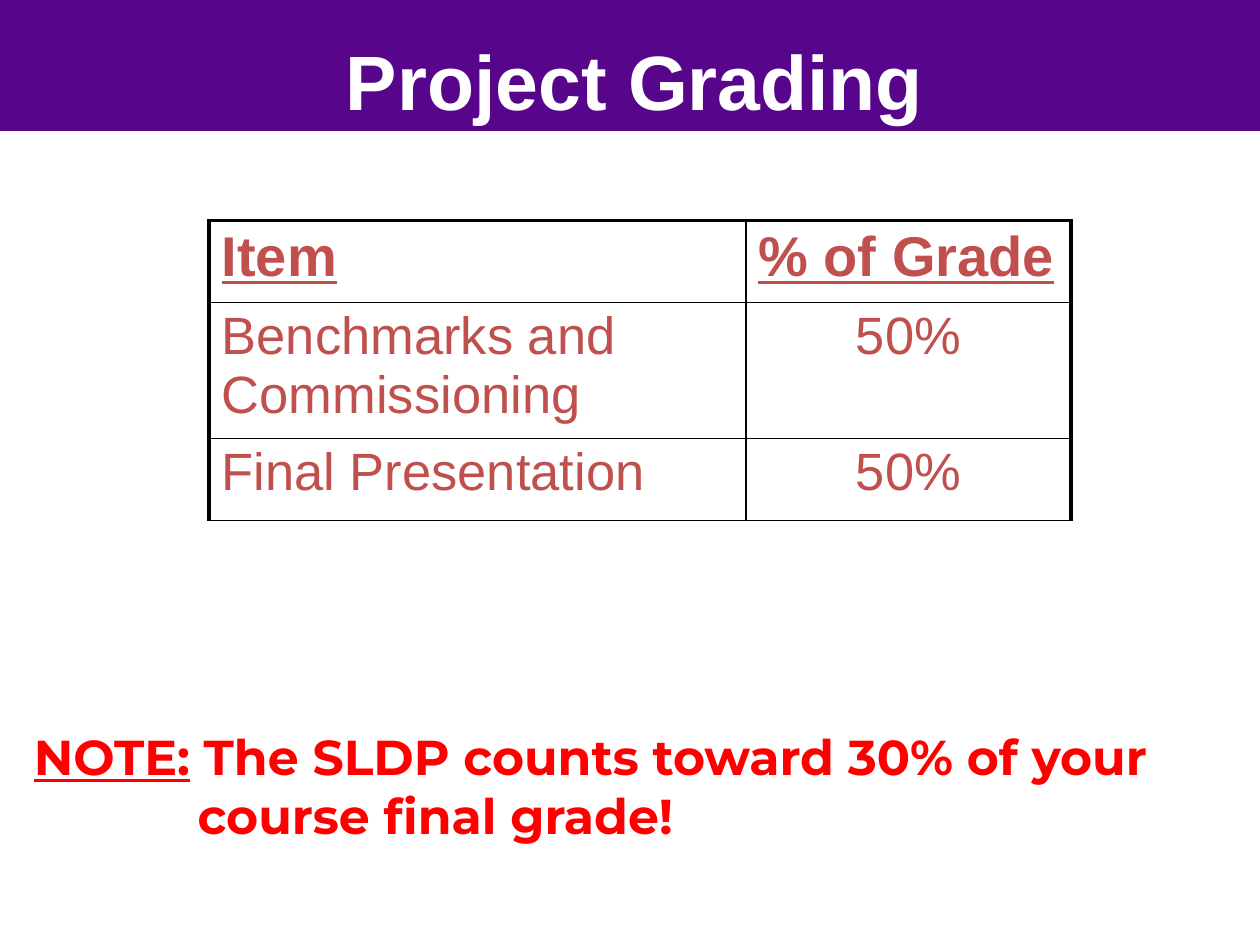
import pptx
import pptx.dml.color
import pptx.enum.shapes
import pptx.enum.text
import pptx.oxml.ns
import pptx.util
import lxml.etree

Inches = pptx.util.Inches
Pt = pptx.util.Pt
Align = pptx.enum.text.PP_ALIGN
Anchor = pptx.enum.text.MSO_ANCHOR

PURPLE, WHITE, BLACK, BRICK, RED = "57068C", "FFFFFF", "000000", "C0504D", "FF0000"
TITLE = {"name": "Arial", "size": Pt(44), "bold": True}
HEADING = {"name": "Arial", "size": Pt(32), "bold": True, "underline": True}
ENTRY = {"name": "Arial", "size": Pt(30), "bold": False}
NOTE = {"name": "Montserrat", "size": Pt(28), "bold": True}

GRADES = [
    ("Item", "% of Grade"),
    ("Benchmarks and Commissioning", "50%"),
    ("Final Presentation", "50%"),
]
COLUMN_WIDTHS = (4.26, 2.58)
ROW_HEIGHTS = (0.65, 1.03, 0.65)


def rgb(value):
    return pptx.dml.color.RGBColor.from_string(value)


def apply(target, values):
    for name, value in values.items():
        setattr(target, name, value)


def add_run(paragraph, text, style, color):
    run = paragraph.add_run()
    run.text = text
    apply(run.font, style)
    run.font.color.rgb = rgb(color)


def add_text_frame(slide, box, anchor):
    frame = slide.shapes.add_textbox(*map(Inches, box)).text_frame
    apply(frame, {"word_wrap": True, "vertical_anchor": anchor})
    return frame


def add_banner(slide):
    banner = slide.shapes.add_shape(
        pptx.enum.shapes.MSO_SHAPE.RECTANGLE, 0, 0, Inches(10), Inches(1.04)
    )
    banner.shadow.inherit = False
    banner.fill.solid()
    banner.fill.fore_color.rgb = rgb(PURPLE)
    banner.line.fill.background()


def add_title(slide):
    heading = add_text_frame(slide, (0.54, 0.22, 9, 0.82), Anchor.TOP).paragraphs[0]
    heading.alignment = Align.CENTER
    add_run(heading, "Project Grading", TITLE, WHITE)


def set_borders(cell, widths):
    qn = pptx.oxml.ns.qn
    properties = cell._tc.get_or_add_tcPr()
    for side, width in widths.items():
        border = lxml.etree.SubElement(properties, qn(f"a:ln{side}"), w=str(Pt(width)))
        fill = lxml.etree.SubElement(border, qn("a:solidFill"))
        lxml.etree.SubElement(fill, qn("a:srgbClr"), val=BLACK)


def add_grades(slide):
    frame = slide.shapes.add_table(
        len(GRADES), len(COLUMN_WIDTHS), Inches(1.66), Inches(1.75),
        Inches(sum(COLUMN_WIDTHS)), Inches(sum(ROW_HEIGHTS)),
    )
    table = frame.table
    apply(table, {"first_row": False, "horz_banding": False})
    for column, width in zip(table.columns, COLUMN_WIDTHS):
        column.width = Inches(width)
    for r, (row, height) in enumerate(zip(table.rows, ROW_HEIGHTS)):
        row.height = Inches(height)
        for c, text in enumerate(GRADES[r]):
            cell = table.cell(r, c)
            apply(cell, {"margin_top": Inches(0.04), "margin_bottom": Inches(0.04)})
            set_borders(cell, {
                "L": 2.25 if c == 0 else 1,
                "R": 2.25 if c == 1 else 1,
                "T": 2.25 if r == 0 else 1,
                "B": 1,
            })
            cell.fill.background()
            paragraph = cell.text_frame.paragraphs[0]
            paragraph.alignment = Align.CENTER if r and c else Align.LEFT
            add_run(paragraph, text, ENTRY if r else HEADING, BRICK)


def add_note(slide):
    frame = add_text_frame(slide, (0.17, 5.67, 9.75, 1.08), Anchor.BOTTOM)
    opening = frame.paragraphs[0]
    add_run(opening, "NOTE:", {**NOTE, "underline": True}, RED)
    add_run(opening, " The SLDP counts toward 30% of your", NOTE, RED)
    ending = frame.add_paragraph()
    ending._p.get_or_add_pPr().set("marL", str(Inches(1.3)))
    add_run(ending, "course final grade!", NOTE, RED)


def main():
    deck = pptx.Presentation()
    apply(deck, {"slide_width": Inches(10), "slide_height": Inches(7.5)})
    slide = deck.slides.add_slide(deck.slide_layouts[6])
    add_banner(slide)
    add_title(slide)
    add_grades(slide)
    add_note(slide)
    deck.save("out.pptx")


if __name__ == "__main__":
    main()
